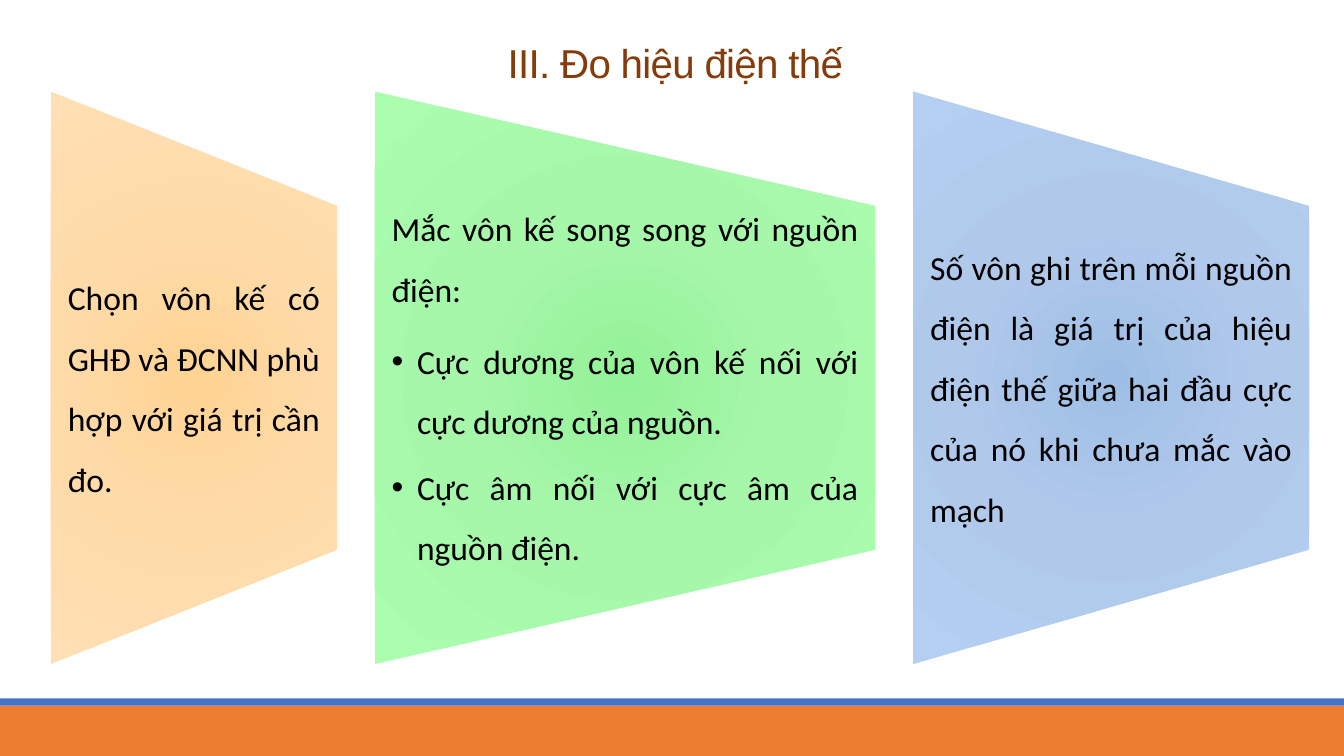
"""Builds the slide on measuring voltage: a title, three tapered panels and a footer band."""
from pptx import Presentation
from pptx.dml.color import RGBColor
from pptx.enum.shapes import MSO_SHAPE
from pptx.enum.text import MSO_ANCHOR, PP_ALIGN
from pptx.oxml import parse_xml
from pptx.oxml.ns import nsdecls, qn
from pptx.util import Cm, Pt

RECTANGLE = MSO_SHAPE.RECTANGLE
TAPERED = MSO_SHAPE.FLOWCHART_MANUAL_OPERATION
TOP, MIDDLE = MSO_ANCHOR.TOP, MSO_ANCHOR.MIDDLE
CENTER, JUSTIFY = PP_ALIGN.CENTER, PP_ALIGN.JUSTIFY

COLORS = {"title": "843C0B", "body": "000000", "band": "ED7D31", "stripe": "4472C4"}
TITLE = "III. Đo hiệu điện thế"
PANELS = [
    {"width": 7.21, "gradient": ("FFD393", "FFDBA9", "FFDFB4"),
     "lead": "Chọn vôn kế có GHĐ và ĐCNN phù hợp với giá trị cần đo.",
     "bullets": []},
    {"width": 12.62, "gradient": ("94F298", "A6F7AA", "AAFEAE"),
     "lead": "Mắc vôn kế song song với nguồn điện:",
     "bullets": ["Cực dương của vôn kế nối với cực dương của nguồn.",
                 "Cực âm nối với cực âm của nguồn điện."]},
    {"width": 9.98, "gradient": ("9FBEE5", "B0C9EB", "B4CFF2"),
     "lead": "Số vôn ghi trên mỗi nguồn điện là giá trị của hiệu điện thế "
             "giữa hai đầu cực của nó khi chưa mắc vào mạch",
     "bullets": []},
]
FOOTER = [("band", 17.78, 1.27), ("stripe", 17.6, 0.18)]

SLIDE_WIDTH, SLIDE_HEIGHT = 33.87, 19.05
PANEL_LEFT, PANEL_GAP = 1.28, 0.95
PANEL_MIDDLE, PANEL_HEIGHT, TEXT_HEIGHT = 9.52, 14.43, 8.66
BULLET_INDENT = 0.64
GRADIENT_STOPS = (0, 45, 100)

TITLE_FRAME = {"word_wrap": True, "vertical_anchor": TOP, "margin_top": Cm(0.17)}
PANEL_FRAME = {"word_wrap": True, "vertical_anchor": MIDDLE, "margin_left": Cm(0.43),
               "margin_right": Cm(0.43), "margin_top": 0, "margin_bottom": 0}
TITLE_LINE = {"alignment": CENTER, "line_spacing": 1.0}
LEAD_LINE = {"alignment": JUSTIFY, "line_spacing": 1.5, "space_after": Pt(8.4)}
BULLET_LINE = {**LEAD_LINE, "space_after": Pt(3.6)}
TITLE_FONT = {"name": "Arial", "size": Pt(28.8)}
BODY_FONT = {"name": "Calibri", "size": Pt(24)}


def apply_format(target, values):
    for name, value in values.items():
        setattr(target, name, value)


def add_frame(slide, left, top, width, height, frame_format):
    frame = slide.shapes.add_textbox(Cm(left), Cm(top), Cm(width), Cm(height)).text_frame
    apply_format(frame, frame_format)
    return frame


def write_line(paragraph, text, line_format, font_format, color):
    apply_format(paragraph, line_format)
    run = paragraph.add_run()
    run.text = text
    apply_format(run.font, font_format)
    run.font.color.rgb = RGBColor.from_string(COLORS[color])
    return run


def add_plain_shape(slide, kind, left, top, width, height):
    shape = slide.shapes.add_shape(kind, Cm(left), Cm(top), Cm(width), Cm(height))
    shape.shadow.inherit = False
    shape.line.fill.background()
    return shape


def fill_radial(shape, colors):
    stops = "".join(
        f'<a:gs pos="{position * 1000}"><a:srgbClr val="{color}"/></a:gs>'
        for position, color in zip(GRADIENT_STOPS, colors))
    gradient = parse_xml(
        f'<a:gradFill {nsdecls("a")} rotWithShape="1"><a:gsLst>{stops}</a:gsLst>'
        '<a:path path="circle"><a:fillToRect l="100000" t="100000" r="100000" b="100000"/>'
        '</a:path></a:gradFill>')
    shape.fill.background()
    properties = shape.element.spPr
    properties.replace(properties.find(qn("a:noFill")), gradient)


def add_bullet(paragraph):
    properties = paragraph._p.get_or_add_pPr()
    properties.set("marL", str(Cm(BULLET_INDENT)))
    properties.set("indent", str(-Cm(BULLET_INDENT)))
    properties.append(parse_xml(f'<a:buFont {nsdecls("a")} typeface="Arial"/>'))
    properties.append(parse_xml(f'<a:buChar {nsdecls("a")} char="•"/>'))


def add_panel(slide, left, panel):
    width = panel["width"]
    outline = add_plain_shape(slide, TAPERED, left + (width - PANEL_HEIGHT) / 2,
                              PANEL_MIDDLE - width / 2, PANEL_HEIGHT, width)
    outline.rotation = 270
    fill_radial(outline, panel["gradient"])
    frame = add_frame(slide, left, PANEL_MIDDLE - TEXT_HEIGHT / 2, width, TEXT_HEIGHT, PANEL_FRAME)
    write_line(frame.paragraphs[0], panel["lead"], LEAD_LINE, BODY_FONT, "body")
    for bullet in panel["bullets"]:
        paragraph = frame.add_paragraph()
        write_line(paragraph, bullet, BULLET_LINE, BODY_FONT, "body")
        add_bullet(paragraph)


def main():
    presentation = Presentation()
    presentation.slide_width, presentation.slide_height = Cm(SLIDE_WIDTH), Cm(SLIDE_HEIGHT)
    slide = presentation.slides.add_slide(presentation.slide_layouts[6])

    for color, top, height in FOOTER:
        bar = add_plain_shape(slide, RECTANGLE, 0, top, SLIDE_WIDTH, height)
        bar.fill.solid()
        bar.fill.fore_color.rgb = RGBColor.from_string(COLORS[color])

    title_frame = add_frame(slide, 3.05, 0.79, 27.94, 1.96, TITLE_FRAME)
    title = write_line(title_frame.paragraphs[0], TITLE, TITLE_LINE, TITLE_FONT, "title")
    title.font._element.set("spc", "-50")

    left = PANEL_LEFT
    for panel in PANELS:
        add_panel(slide, left, panel)
        left += panel["width"] + PANEL_GAP

    presentation.save("out.pptx")


if __name__ == "__main__":
    main()
